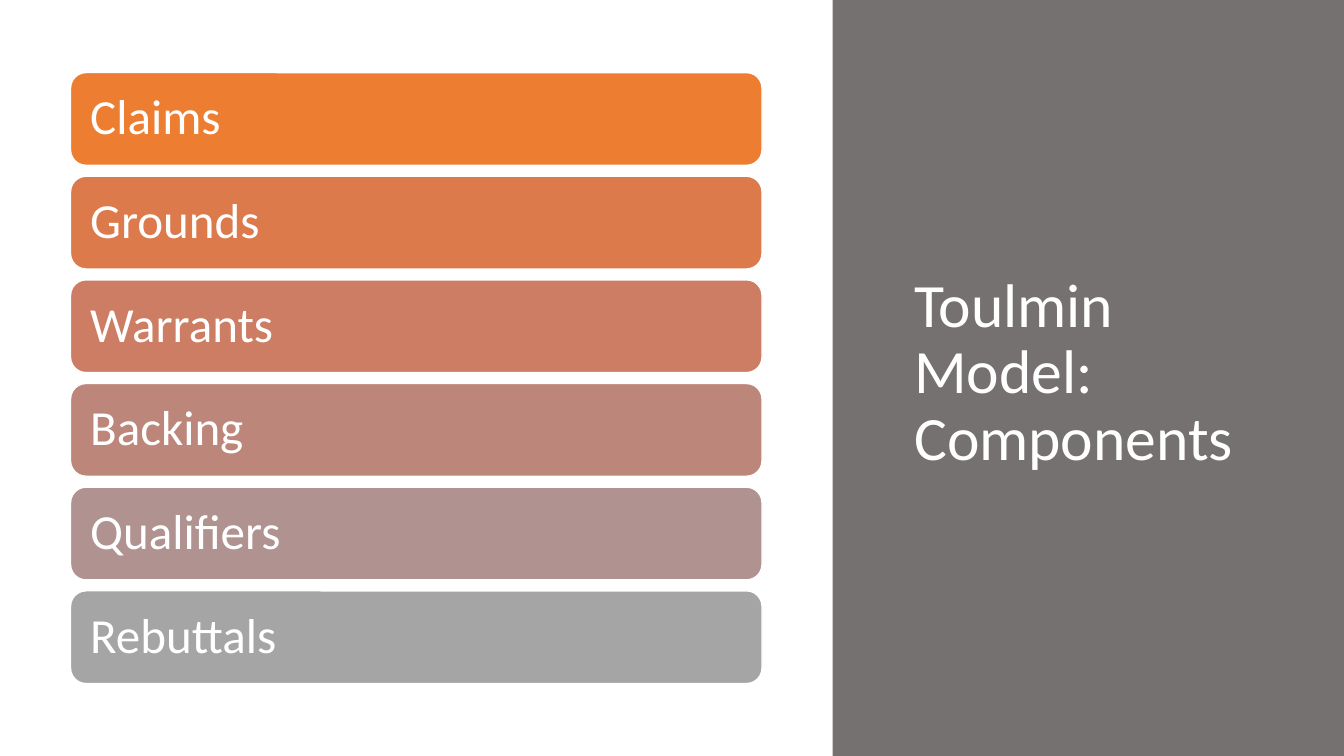
from pptx import Presentation
from pptx import util as u
from pptx.dml.color import RGBColor
from pptx.enum import shapes, text

WHITE = RGBColor(0xFF, 0xFF, 0xFF)
PANEL = RGBColor(0x76, 0x71, 0x71)
COMPONENTS = [
    ("Claims", RGBColor(0xED, 0x7D, 0x31)),
    ("Grounds", RGBColor(0xDC, 0x7A, 0x4B)),
    ("Warrants", RGBColor(0xCC, 0x7D, 0x64)),
    ("Backing", RGBColor(0xBD, 0x86, 0x7B)),
    ("Qualifiers", RGBColor(0xB0, 0x93, 0x91)),
    ("Rebuttals", RGBColor(0xA5, 0xA5, 0xA5)),
]


class Deck:
    """Style and current slide; lengths are percentages of the slide's size."""
    font = "Calibri"

    def __init__(self):
        self.prs = Presentation()
        self.prs.slide_width = u.Inches(13.33)
        self.prs.slide_height = u.Inches(7.5)
        self.s = self.prs.slides.add_slide(self.prs.slide_layouts[6])

    def box(self, left, top, width, height):
        w, h = self.prs.slide_width, self.prs.slide_height
        return [round(share * side / 100) for share, side
                in ((left, w), (top, h), (width, w), (height, h))]

    def shape(self, kind, area, fill, line=None):
        sp = self.s.shapes.add_shape(kind, *self.box(*area))
        sp.shadow.inherit = False
        sp.fill.solid()
        sp.fill.fore_color.rgb = fill
        if line is None:
            sp.line.fill.background()
        else:
            sp.line.color.rgb = line
            sp.line.width = u.Pt(1)
        return sp

    def label(self, sp, words, size):
        tf = sp.text_frame
        tf.word_wrap = True
        tf.vertical_anchor = text.MSO_ANCHOR.MIDDLE
        p = tf.paragraphs[0]
        p.alignment = text.PP_ALIGN.LEFT
        p.line_spacing = 0.9
        r = p.add_run()
        r.text = words
        r.font.name = self.font
        r.font.size = u.Pt(size)
        r.font.color.rgb = WHITE

    def panel(self, area, fill):
        self.shape(shapes.MSO_SHAPE.RECTANGLE, area, fill)

    def title(self, area, words):
        self.label(self.s.shapes.add_textbox(*self.box(*area)), words, 44)

    def bar(self, area, words, fill):
        sp = self.shape(shapes.MSO_SHAPE.ROUNDED_RECTANGLE, area, fill, WHITE)
        tf = sp.text_frame
        tf.margin_left = tf.margin_right = u.Inches(0.15)
        tf.margin_top = tf.margin_bottom = u.Inches(0.15)
        self.label(sp, words, 35)


def main():
    deck = Deck()

    # Title panel on the right
    deck.panel((61.95, 0, 38.05, 100), PANEL)
    deck.title((67.28, 9.33, 30.08, 80.27), "Toulmin Model: Components")

    # Stack of component bars
    first_top, pitch = 9.6, 13.71
    for row, (name, fill) in enumerate(COMPONENTS):
        deck.bar((5.25, first_top + row * pitch, 51.45, 12.27), name, fill)

    deck.prs.save("out.pptx")


if __name__ == "__main__":
    main()
